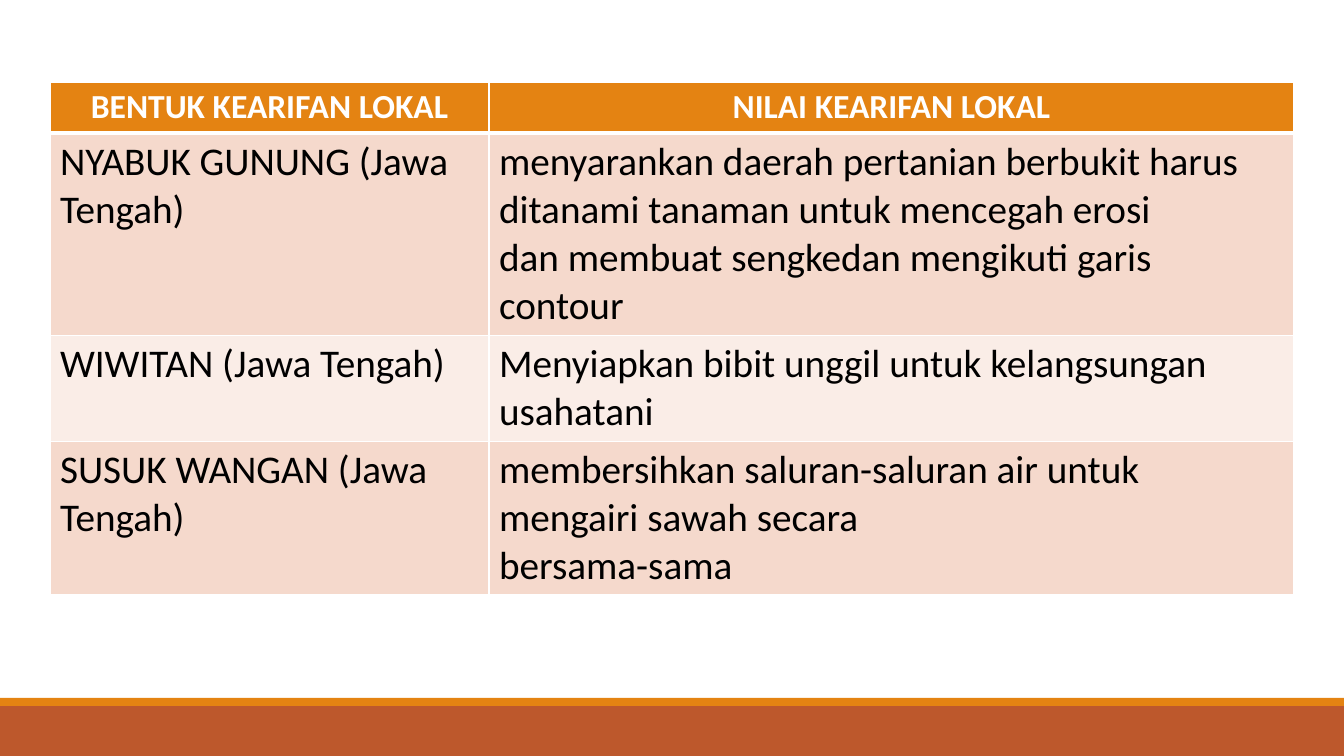
from dataclasses import dataclass

from lxml import etree
from pptx import Presentation
from pptx import util as u
from pptx.dml.color import RGBColor
from pptx.enum import shapes, text
from pptx.oxml.ns import qn

SLIDE_W, SLIDE_H = 1344, 756
EMU_PER_PX = 12192000 / SLIDE_W
FONT = "Calibri"
COLORS = {
    "orange": "E48312",
    "rust": "BD582C",
    "band_dark": "F5D9CC",
    "band_light": "FAEDE7",
    "white": "FFFFFF",
    "black": "000000",
}


@dataclass
class Bar:
    top: int
    height: int
    color: str


@dataclass
class Row:
    form: str
    value: str
    height: int


@dataclass
class RowStyle:
    fill: str
    ink: str
    size: int
    bold: bool
    align: text.PP_ALIGN
    bottom_pt: int


FOOTER_BARS = [Bar(706, 50, "rust"), Bar(698, 8, "orange")]
TABLE_LEFT, TABLE_TOP = 50, 82
COLUMN_WIDTHS = [439, 805]
ROWS = [
    Row("BENTUK KEARIFAN LOKAL", "NILAI KEARIFAN LOKAL", 50),
    Row("NYABUK GUNUNG (Jawa Tengah)",
        "menyarankan daerah pertanian berbukit harus ditanami tanaman untuk mencegah erosi\n"
        "dan membuat sengkedan mengikuti garis contour", 202),
    Row("WIWITAN (Jawa Tengah)",
        "Menyiapkan bibit unggil untuk kelangsungan usahatani", 106),
    Row("SUSUK WANGAN (Jawa Tengah)",
        "membersihkan saluran-saluran air untuk mengairi sawah secara\nbersama-sama", 153),
]


def px(length: int) -> int:
    return round(length * EMU_PER_PX)


def rgb(name: str) -> RGBColor:
    return RGBColor.from_string(COLORS[name])


def row_style(index: int) -> RowStyle:
    if index == 0:
        return RowStyle("orange", "white", 24, True, text.PP_ALIGN.CENTER, 3)
    band = "band_dark" if index % 2 else "band_light"
    return RowStyle(band, "black", 28, False, text.PP_ALIGN.LEFT, 1)


def draw_bar(slide, bar: Bar) -> None:
    strip = slide.shapes.add_shape(
        shapes.MSO_SHAPE.RECTANGLE, 0, px(bar.top), px(SLIDE_W), px(bar.height))
    strip.shadow.inherit = False
    strip.fill.solid()
    strip.fill.fore_color.rgb = rgb(bar.color)
    strip.line.fill.background()


def set_borders(cell, top_pt: int, bottom_pt: int) -> None:
    properties = cell._tc.get_or_add_tcPr()
    edges = {"a:lnL": 1, "a:lnR": 1, "a:lnT": top_pt, "a:lnB": bottom_pt}
    for position, (tag, width) in enumerate(edges.items()):
        edge = etree.Element(qn(tag), w=str(u.Pt(width)))
        fill = etree.SubElement(edge, qn("a:solidFill"))
        etree.SubElement(fill, qn("a:srgbClr"), val=COLORS["white"])
        properties.insert(position, edge)


def fill_cell(cell, words: str, style: RowStyle, top_pt: int) -> None:
    cell.fill.solid()
    cell.fill.fore_color.rgb = rgb(style.fill)
    set_borders(cell, top_pt, style.bottom_pt)
    cell.text_frame.text = words
    for paragraph in cell.text_frame.paragraphs:
        paragraph.alignment = style.align
        for run in paragraph.runs:
            run.font.name = FONT
            run.font.size = u.Pt(style.size)
            run.font.bold = style.bold
            run.font.color.rgb = rgb(style.ink)


def draw_table(slide) -> None:
    wisdom = slide.shapes.add_table(
        len(ROWS), len(COLUMN_WIDTHS), px(TABLE_LEFT), px(TABLE_TOP),
        px(sum(COLUMN_WIDTHS)), px(sum(row.height for row in ROWS))).table
    for column, width in zip(wisdom.columns, COLUMN_WIDTHS):
        column.width = px(width)
    top_pt = 1
    for index, row in enumerate(ROWS):
        wisdom.rows[index].height = px(row.height)
        style = row_style(index)
        for column, words in enumerate((row.form, row.value)):
            fill_cell(wisdom.cell(index, column), words, style, top_pt)
        top_pt = style.bottom_pt


def main() -> None:
    deck = Presentation()
    deck.slide_width, deck.slide_height = px(SLIDE_W), px(SLIDE_H)
    slide = deck.slides.add_slide(deck.slide_layouts[6])

    # Footer bars
    for bar in FOOTER_BARS:
        draw_bar(slide, bar)

    # Table of local wisdom
    draw_table(slide)

    deck.save("out.pptx")


if __name__ == "__main__":
    main()
